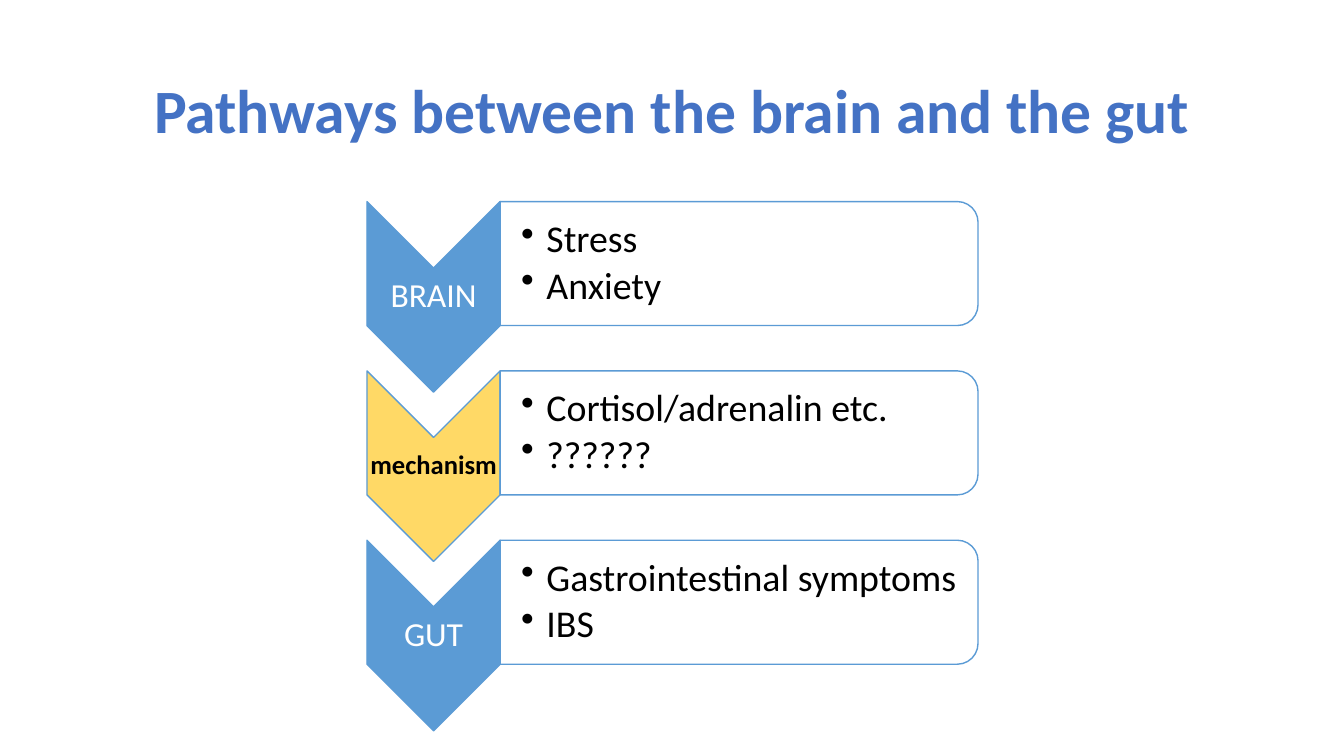
from lxml import etree
from pptx import Presentation
from pptx.dml.color import RGBColor
from pptx.enum.shapes import MSO_SHAPE
from pptx.enum.text import MSO_ANCHOR, MSO_AUTO_SIZE, PP_ALIGN
from pptx.oxml.ns import qn
from pptx.util import Inches, Pt

CHEVRON = MSO_SHAPE.CHEVRON
ROUND_TOP = MSO_SHAPE.ROUND_2_SAME_RECTANGLE
MIDDLE = MSO_ANCHOR.MIDDLE
NO_AUTOFIT = MSO_AUTO_SIZE.NONE
CENTER, LEFT = PP_ALIGN.CENTER, PP_ALIGN.LEFT

TITLE_BLUE = RGBColor(0x44, 0x72, 0xC4)
BLUE = RGBColor(0x5B, 0x9B, 0xD5)
YELLOW = RGBColor(0xFF, 0xD9, 0x66)
WHITE = RGBColor(0xFF, 0xFF, 0xFF)
BLACK = RGBColor(0x00, 0x00, 0x00)

TITLE_FONT = {"size": Pt(44), "bold": True, "color": TITLE_BLUE}
STAGE_FONT = {"size": Pt(24), "bold": False, "color": WHITE}
MECHANISM_FONT = {"size": Pt(19), "bold": True, "color": BLACK}
LIST_FONT = {"size": Pt(27), "bold": False, "color": BLACK}

# Label, chevron fill, label font, label inset, list items
STAGES = [
    ("BRAIN", BLUE, STAGE_FONT, 0.02, ["Stress", "Anxiety"]),
    ("mechanism", YELLOW, MECHANISM_FONT, 0.01,
     ["Cortisol/adrenalin etc.", "??????"]),
    ("GUT", BLUE, STAGE_FONT, 0.02, ["Gastrointestinal symptoms", "IBS"]),
]
STAGE_LEFT, STAGE_TOP, STAGE_PITCH = 3.64, 2.0, 1.68
CHEVRON_WIDTH, CHEVRON_HEIGHT = 1.32, 1.89
PANEL_WIDTH, PANEL_HEIGHT = 4.74, 1.23
LABEL_HEIGHT = 0.57
LIST_WIDTH, LIST_HEIGHT = 4.68, 1.11


def format_font(font, values):
    font.name = "Calibri"
    for name, value in values.items():
        if name == "color":
            font.color.rgb = value
        else:
            setattr(font, name, value)


def set_frame(frame, insets):
    frame.word_wrap = True
    frame.auto_size = NO_AUTOFIT
    frame.vertical_anchor = MIDDLE
    for side, inset in zip(("left", "top", "right", "bottom"), insets):
        setattr(frame, f"margin_{side}", Inches(inset))


def write_paragraph(paragraph, text, font_values, alignment):
    paragraph.text = text
    paragraph.alignment = alignment
    paragraph.line_spacing = 0.9
    format_font(paragraph.runs[0].font, font_values)


def add_bullet(paragraph):
    properties = paragraph._p.get_or_add_pPr()
    properties.set("marL", str(Inches(0.25)))
    properties.set("indent", str(-Inches(0.25)))
    etree.SubElement(properties, qn("a:buChar")).set("char", "•")


def add_turned_shape(slide, kind, left, top, width, height, fill):
    """Add a shape turned by 90 degrees that covers the given box."""
    shape = slide.shapes.add_shape(
        kind,
        Inches(left + (width - height) / 2), Inches(top + (height - width) / 2),
        Inches(height), Inches(width))
    shape.rotation = 90
    shape.shadow.inherit = False
    shape.fill.solid()
    shape.fill.fore_color.rgb = fill
    shape.line.color.rgb = BLUE
    shape.line.width = Pt(1)
    return shape


def add_text_frame(slide, left, top, width, height, insets):
    box = slide.shapes.add_textbox(
        Inches(left), Inches(top), Inches(width), Inches(height))
    set_frame(box.text_frame, insets)
    return box.text_frame


def add_title(slide, left, top, width, height):
    title = slide.shapes.title
    title.left, title.top = Inches(left), Inches(top)
    title.width, title.height = Inches(width), Inches(height)
    set_frame(title.text_frame, (0.1, 0.05, 0.1, 0.05))
    write_paragraph(title.text_frame.paragraphs[0],
                    "Pathways between the brain and the gut", TITLE_FONT, CENTER)


def add_stage(slide, left, top, label, fill, label_font, inset, items):
    # Chevron with its label
    add_turned_shape(slide, CHEVRON, left, top,
                     CHEVRON_WIDTH, CHEVRON_HEIGHT, fill)
    label_top = top + (CHEVRON_HEIGHT - LABEL_HEIGHT) / 2
    frame = add_text_frame(slide, left, label_top, CHEVRON_WIDTH,
                           LABEL_HEIGHT, [inset] * 4)
    write_paragraph(frame.paragraphs[0], label, label_font, CENTER)

    # Panel, 90 % opaque
    panel_left = left + CHEVRON_WIDTH
    panel = add_turned_shape(slide, ROUND_TOP, panel_left, top,
                             PANEL_WIDTH, PANEL_HEIGHT, WHITE)
    color = panel._element.spPr.find(qn("a:solidFill"))[0]
    etree.SubElement(color, qn("a:alpha")).set("val", "90000")

    # Bulleted list
    list_top = top + (PANEL_HEIGHT - LIST_HEIGHT) / 2
    frame = add_text_frame(slide, panel_left, list_top, LIST_WIDTH,
                           LIST_HEIGHT, (0.21, 0.02, 0.02, 0.02))
    for index, item in enumerate(items):
        paragraph = frame.add_paragraph() if index else frame.paragraphs[0]
        add_bullet(paragraph)
        paragraph.level = 1
        paragraph.space_after = Pt(4)
        write_paragraph(paragraph, item, LIST_FONT, LEFT)


def main():
    presentation = Presentation()
    presentation.slide_width = Inches(13.33)
    presentation.slide_height = Inches(7.5)
    slide = presentation.slides.add_slide(presentation.slide_layouts[5])
    add_title(slide, 0.92, 0.4, 11.5, 1.45)
    for index, stage in enumerate(STAGES):
        add_stage(slide, STAGE_LEFT, STAGE_TOP + index * STAGE_PITCH, *stage)
    presentation.save("out.pptx")


if __name__ == "__main__":
    main()
